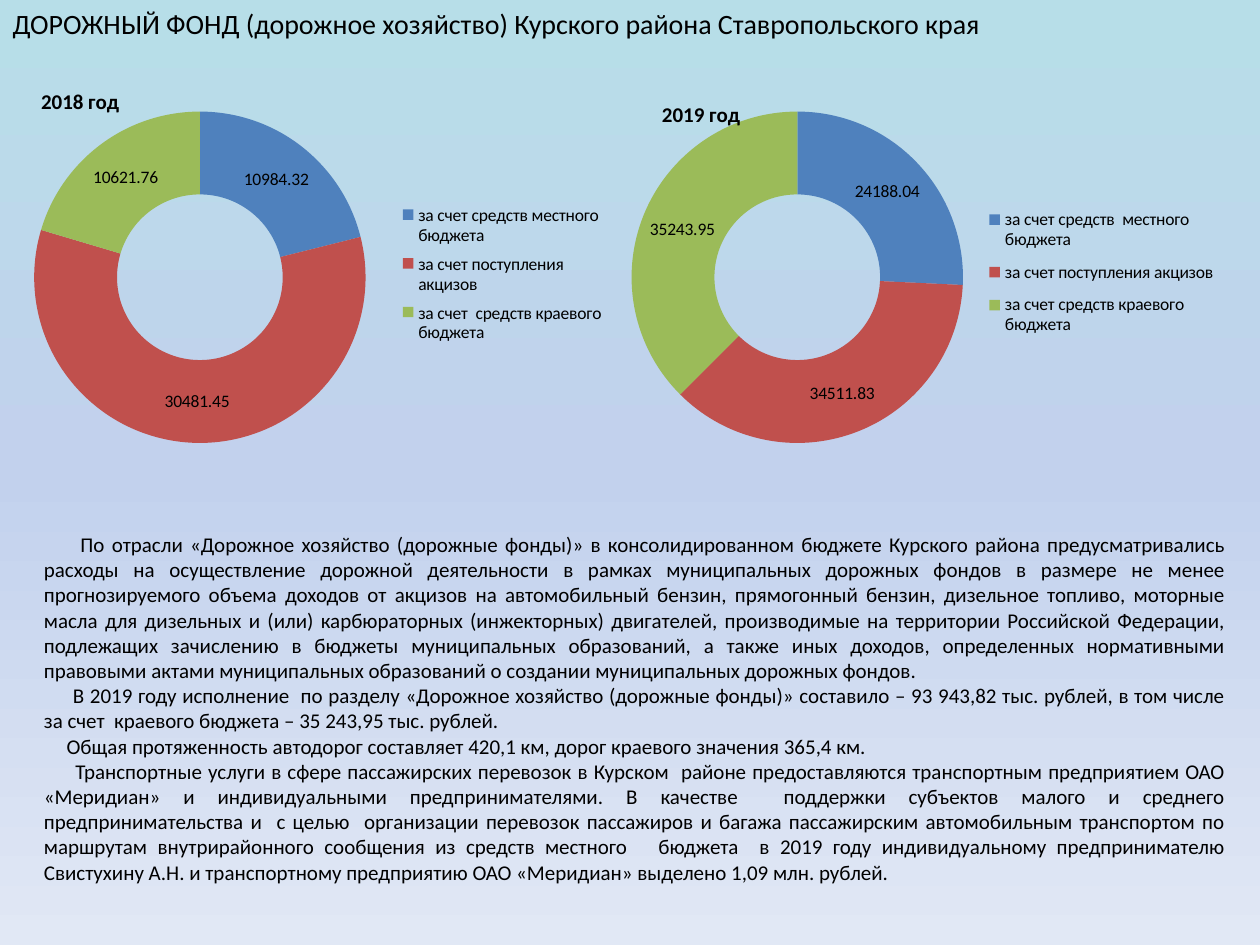
from copy import deepcopy
from dataclasses import dataclass

from pptx import Presentation
from pptx.chart.data import CategoryChartData
from pptx.dml.color import RGBColor
from pptx.enum.chart import XL_CHART_TYPE, XL_LEGEND_POSITION
from pptx.enum.text import MSO_ANCHOR, MSO_AUTO_SIZE, PP_ALIGN
from pptx.oxml import parse_xml
from pptx.oxml.ns import nsdecls, qn
from pptx.util import Inches, Pt


@dataclass(frozen=True)
class Theme:
    font: str = "Calibri"
    ink: str = "000000"
    sectors: tuple = ("4F81BD", "C0504D", "9BBB59")
    backdrop: tuple = ((0, "B7DEE8"), (0.5, "C2D1ED"), (1, "E1E8F5"))
    heading: int = 16
    body: int = 12
    label: int = 10


def apply_format(target, values):
    for name, value in values.items():
        setattr(target, name, value)


def set_layout(element, position, shares):
    for existing in element.findall(qn("c:layout")):
        element.remove(existing)
    modes = ["xMode", "yMode"]
    if element.tag == qn("c:plotArea"):
        modes.insert(0, "layoutTarget")
    items = [f'<c:{mode} val="{"inner" if mode == "layoutTarget" else "edge"}"/>' for mode in modes]
    items += [f'<c:{key} val="{share}"/>' for key, share in zip("xywh", shares)]
    element.insert(position, parse_xml(
        f'<c:layout {nsdecls("c")}><c:manualLayout>{"".join(items)}</c:manualLayout></c:layout>'))


class SlideBuilder:
    def __init__(self, deck, theme):
        self.deck = deck
        self.theme = theme
        self.slide = deck.slides.add_slide(deck.slide_layouts[5])

    def place(self, left, top, width, height):
        across, down = self.deck.slide_width, self.deck.slide_height
        return int(left * across), int(top * down), int(width * across), int(height * down)

    def style_font(self, font, size, bold=False):
        apply_format(font, {"name": self.theme.font, "size": Pt(size), "bold": bold})
        font.color.rgb = RGBColor.from_string(self.theme.ink)

    def background(self):
        fill = self.slide.background.fill
        fill.gradient()
        fill.gradient_angle = 270
        stop_list = self.slide.element.xpath(".//a:gsLst")[0]
        stop_list.append(deepcopy(stop_list[-1]))
        for stop, (position, color) in zip(fill.gradient_stops, self.theme.backdrop):
            stop.position = position
            stop.color.rgb = RGBColor.from_string(color)

    def title(self, text, area):
        box = self.slide.shapes.title
        apply_format(box, dict(zip(("left", "top", "width", "height"), self.place(*area))))
        frame = box.text_frame
        apply_format(frame, {"text": text, "word_wrap": True, "vertical_anchor": MSO_ANCHOR.TOP,
                             "auto_size": MSO_AUTO_SIZE.SHAPE_TO_FIT_TEXT})
        para = frame.paragraphs[0]
        para.alignment = PP_ALIGN.LEFT
        self.style_font(para.font, self.theme.heading)

    def body(self, paragraphs, area):
        frame = self.slide.shapes.add_textbox(*self.place(*area)).text_frame
        apply_format(frame, {"word_wrap": True, "auto_size": MSO_AUTO_SIZE.SHAPE_TO_FIT_TEXT})
        for index, (indent, text) in enumerate(paragraphs):
            para = frame.add_paragraph() if index else frame.paragraphs[0]
            apply_format(para, {"text": text, "alignment": PP_ALIGN.JUSTIFY})
            para._p.get_or_add_pPr().set("indent", str(Inches(indent)))
            self.style_font(para.font, self.theme.body)

    def doughnut(self, year, categories, values, area, layouts):
        data = CategoryChartData()
        data.categories = categories
        data.add_series(year, values)
        chart = self.slide.shapes.add_chart(XL_CHART_TYPE.DOUGHNUT, *self.place(*area), data).chart
        self.style_font(chart.font, self.theme.label)

        apply_format(chart, {"has_title": True, "has_legend": True})
        heading = chart.chart_title
        heading.include_in_layout = True
        heading.text_frame.text = year
        self.style_font(heading.text_frame.paragraphs[0].runs[0].font, self.theme.body, bold=True)
        apply_format(chart.legend, {"position": XL_LEGEND_POSITION.RIGHT, "include_in_layout": False})
        self.style_font(chart.legend.font, self.theme.label)

        plot = chart.plots[0]
        apply_format(plot, {"vary_by_categories": True, "has_data_labels": True})
        apply_format(plot.data_labels, {"show_value": True, "show_percentage": False})
        self.style_font(plot.data_labels.font, self.theme.label)
        for index, color in enumerate(self.theme.sectors):
            fill = plot.series[0].points[index].format.fill
            fill.solid()
            fill.fore_color.rgb = RGBColor.from_string(color)

        root = chart.element
        for tag, position in (("title", 1), ("plotArea", 0), ("legend", 1)):
            set_layout(root.find(f".//{qn('c:' + tag)}"), position, layouts[tag])


CHARTS = (
    ("2018 год",
     ("за счет средств местного бюджета", "за счет поступления акцизов",
      "за счет  средств краевого бюджета"),
     (10984.32, 30481.45, 10621.76), 0,
     {"title": (0.06, 0.1), "plotArea": (0.055, 0.167, 0.535, 0.79),
      "legend": (0.64, 0.37, 0.34, 0.37)}),
    ("2019 год",
     ("за счет средств  местного бюджета", "за счет поступления акцизов",
      "за счет средств краевого бюджета"),
     (24188.04, 34511.83, 35243.95), 0.483,
     {"title": (0.08, 0.13), "plotArea": (0.037, 0.167, 0.535, 0.79),
      "legend": (0.6, 0.37, 0.39, 0.36)}),
)

PARAGRAPHS = (
    (0.29, "По отрасли «Дорожное хозяйство (дорожные фонды)» в консолидированном бюджете Курского района "
     "предусматривались расходы на осуществление дорожной деятельности в рамках муниципальных дорожных "
     "фондов в размере не менее прогнозируемого объема доходов от акцизов на автомобильный бензин, "
     "прямогонный бензин, дизельное топливо, моторные масла для дизельных и (или) карбюраторных "
     "(инжекторных) двигателей, производимые на территории Российской Федерации, подлежащих зачислению "
     "в бюджеты муниципальных образований, а также иных доходов, определенных нормативными правовыми "
     "актами муниципальных образований о создании муниципальных дорожных фондов."),
    (0.23, "В 2019 году исполнение  по разделу «Дорожное хозяйство (дорожные фонды)» составило – "
     "93 943,82 тыс. рублей, в том числе за счет  краевого бюджета – 35 243,95 тыс. рублей."),
    (0.18, "Общая протяженность автодорог составляет 420,1 км, дорог краевого значения 365,4 км."),
    (0.25, "Транспортные услуги в сфере пассажирских перевозок в Курском  районе предоставляются "
     "транспортным предприятием ОАО «Меридиан» и индивидуальными предпринимателями. В качестве  "
     "поддержки субъектов малого и среднего предпринимательства и  с целью  организации перевозок "
     "пассажиров и багажа пассажирским автомобильным транспортом по маршрутам внутрирайонного сообщения "
     "из средств местного   бюджета  в 2019 году индивидуальному предпринимателю Свистухину А.Н. и "
     "транспортному предприятию ОАО «Меридиан» выделено 1,09 млн. рублей."),
)


def main():
    deck = Presentation()
    apply_format(deck, {"slide_width": Inches(10), "slide_height": Inches(7.5)})
    page = SlideBuilder(deck, Theme())
    page.background()
    page.title("ДОРОЖНЫЙ ФОНД (дорожное хозяйство) Курского района Ставропольского края", (0, 0, 1, 0.05))
    page.body(PARAGRAPHS, (0.025, 0.556, 0.958, 0.417))
    for year, categories, values, left, layouts in CHARTS:
        page.doughnut(year, categories, values, (left, 0.044, 0.492, 0.444), layouts)
    deck.save("out.pptx")


if __name__ == "__main__":
    main()
